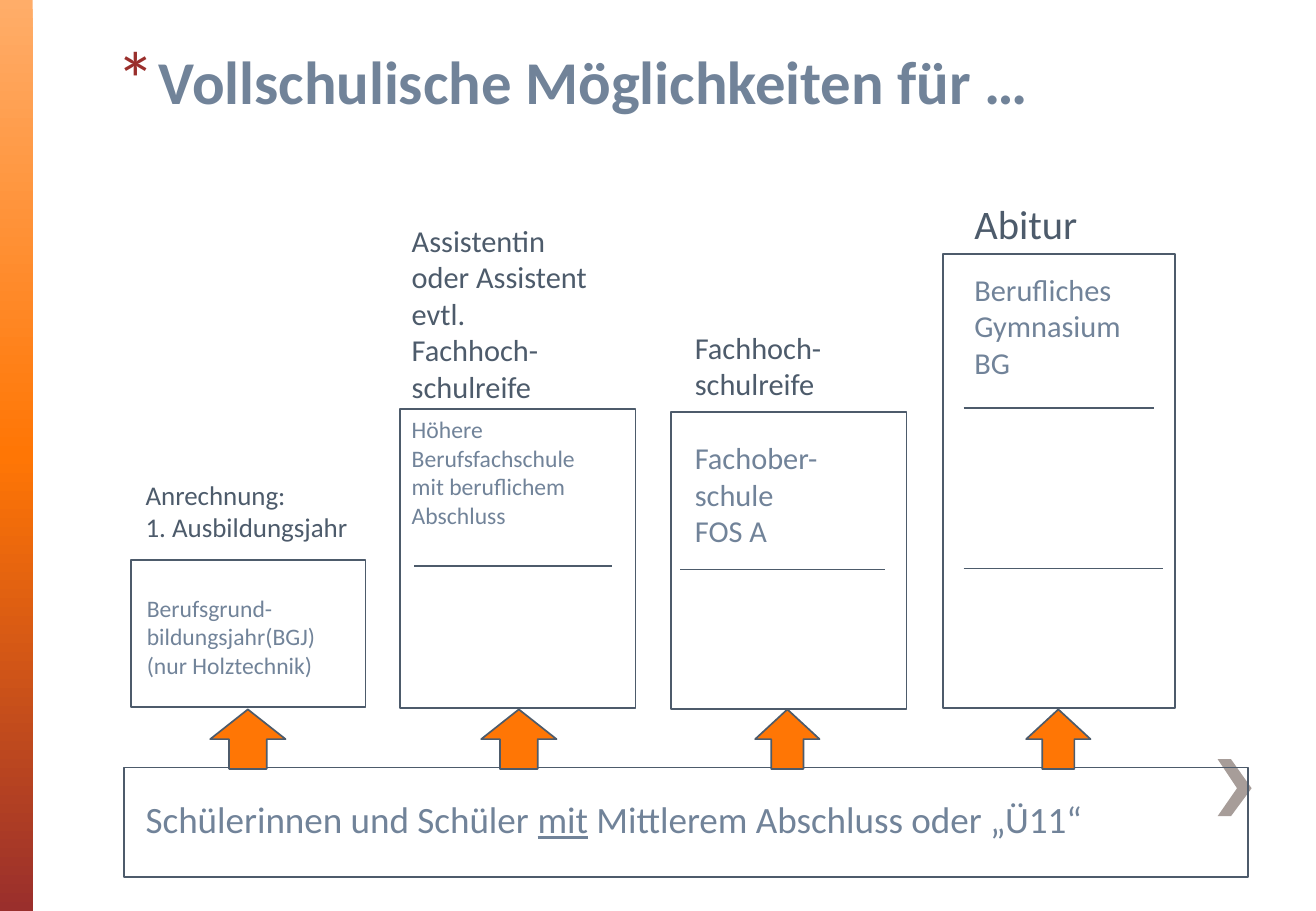
from lxml import etree
from pptx import Presentation
from pptx.dml.color import RGBColor
from pptx.enum.shapes import MSO_CONNECTOR, MSO_SHAPE
from pptx.oxml import parse_xml
from pptx.oxml.ns import nsdecls, qn
from pptx.util import Inches, Pt

FONT = "Calibri"
DARK = RGBColor(0x4D, 0x5B, 0x6B)
SLATE = RGBColor(0x71, 0x83, 0x99)
ORANGE = RGBColor(0xFF, 0x76, 0x05)
LIGHT_ORANGE = RGBColor(0xFF, 0xAD, 0x69)
RED = RGBColor(0x9A, 0x2F, 0x2C)
GREY = RGBColor(0xA7, 0x9D, 0x99)

# left, top, width, height
SCHOOL_BOXES = [
    (1.08, 4.61, 1.93, 1.21),
    (3.29, 3.37, 1.94, 2.46),
    (5.52, 3.39, 1.94, 2.45),
    (7.76, 2.09, 1.91, 3.74),
]
# left, top, width, height, size, colour, paragraphs
LABELS = [
    (1.1, 3.89, 2.36, 0.64, 16, DARK, ["Anrechnung:", "1. Ausbildungsjahr"]),
    (1.11, 4.84, 2.05, 0.81, 14, SLATE,
     ["Berufsgrund-bildungsjahr(BGJ)\v(nur Holztechnik)"]),
    (3.29, 1.78, 1.96, 1.61, 18, DARK,
     ["Assistentin", "oder Assistent", "evtl.", "Fachhoch-schulreife"]),
    (3.29, 3.37, 1.94, 1.75, 14, SLATE,
     ["Höhere", "Berufsfachschule", "mit beruflichem Abschluss"]),
    (5.62, 2.66, 1.7, 0.7, 18, DARK, ["Fachhoch-schulreife"]),
    (5.62, 3.57, 1.64, 1.01, 18, SLATE, ["Fachober-schule", "FOS A"]),
    (7.92, 1.59, 1.61, 0.5, 24, DARK, ["Abitur"]),
    (7.92, 2.18, 1.61, 1.01, 18, SLATE, ["Berufliches", "Gymnasium", "BG"]),
]
# left, right, y
DIVIDERS = [(3.41, 5.04, 4.66), (5.6, 7.28, 4.69),
            (7.93, 9.5, 3.36), (7.93, 9.57, 4.68)]
# centre, width
ARROWS = [(2.04, 0.62), (4.27, 0.62), (6.48, 0.53), (8.71, 0.53)]


def add_preset(slide, preset, left, top, width, height):
    shape = slide.shapes.add_shape(
        preset, Inches(left), Inches(top), Inches(width), Inches(height))
    shape.shadow.inherit = False
    return shape


def set_outline(shape):
    shape.line.color.rgb = DARK
    shape.line.width = Pt(1)


def add_side_bar(slide):
    bar = add_preset(slide, MSO_SHAPE.RECTANGLE, 0, 0, 0.27, 7.5)
    bar.line.fill.background()
    stops = "".join(
        f'<a:gs pos="{position}"><a:srgbClr val="{colour}"/></a:gs>'
        for position, colour in
        [(0, LIGHT_ORANGE), (50000, ORANGE), (100000, RED)])
    gradient = parse_xml(
        f'<a:gradFill {nsdecls("a")} rotWithShape="1"><a:gsLst>{stops}</a:gsLst>'
        '<a:lin ang="5400000" scaled="0"/></a:gradFill>')
    bar._element.spPr.find(qn("a:prstGeom")).addnext(gradient)


def add_chevron(slide):
    points = [(10.02, 6.25), (10.18, 6.49), (10.02, 6.72),
              (10.13, 6.72), (10.3, 6.49)]
    builder = slide.shapes.build_freeform(Inches(10.13), Inches(6.25))
    builder.add_line_segments([(Inches(x), Inches(y)) for x, y in points])
    chevron = builder.convert_to_shape()
    chevron.shadow.inherit = False
    chevron.fill.solid()
    chevron.fill.fore_color.rgb = GREY
    chevron.line.fill.background()


def add_box(slide, left, top, width, height):
    box = add_preset(slide, MSO_SHAPE.RECTANGLE, left, top, width, height)
    box.fill.background()
    set_outline(box)


def add_arrow(slide, centre, width):
    arrow = add_preset(slide, MSO_SHAPE.UP_ARROW,
                       centre - width / 2, 5.84, width, 0.49)
    arrow.fill.solid()
    arrow.fill.fore_color.rgb = ORANGE
    set_outline(arrow)


def add_divider(slide, left, right, y):
    line = slide.shapes.add_connector(
        MSO_CONNECTOR.STRAIGHT, Inches(left), Inches(y), Inches(right), Inches(y))
    set_outline(line)
    etree.SubElement(line._element.spPr, qn("a:effectLst"))


def format_run(run, size, colour):
    run.font.name = FONT
    run.font.size = Pt(size)
    run.font.color.rgb = colour


def add_label(slide, left, top, width, height, size, colour, lines):
    label = slide.shapes.add_textbox(
        Inches(left), Inches(top), Inches(width), Inches(height))
    text_frame = label.text_frame
    text_frame.word_wrap = True
    text_frame.text = "\n".join(lines)
    for paragraph in text_frame.paragraphs:
        for run in paragraph.runs:
            format_run(run, size, colour)
    return text_frame.paragraphs[0]


def add_title(slide):
    paragraph = add_label(slide, 0.86, 0.38, 9.34, 0.83, 36, SLATE,
                          ["Vollschulische Möglichkeiten für …"])
    paragraph.runs[0].font.bold = True
    paragraph.line_spacing = 0.9
    properties = paragraph._p.get_or_add_pPr()
    properties.set("marL", str(Inches(0.35)))
    properties.set("indent", str(-Inches(0.35)))
    for bullet_xml in (
            f'<a:buClr {nsdecls("a")}><a:srgbClr val="{RED}"/></a:buClr>',
            f'<a:buSzPct {nsdecls("a")} val="128000"/>',
            f'<a:buFont {nsdecls("a")} typeface="{FONT}"/>',
            f'<a:buChar {nsdecls("a")} char="*"/>'):
        properties.append(parse_xml(bullet_xml))


def add_entry_label(slide):
    paragraph = add_label(slide, 1.1, 6.51, 9.25, 0.47, 22, SLATE,
                          ["Schülerinnen und Schüler "])
    for text in ("mit", " Mittlerem Abschluss oder „Ü11“"):
        run = paragraph.add_run()
        run.text = text
        format_run(run, 22, SLATE)
        run.font.underline = text == "mit"


def main():
    presentation = Presentation()
    presentation.slide_width = Inches(10.83)
    presentation.slide_height = Inches(7.5)
    slide = presentation.slides.add_slide(presentation.slide_layouts[6])

    add_side_bar(slide)
    add_chevron(slide)
    add_box(slide, 1.02, 6.32, 9.25, 0.9)
    add_entry_label(slide)
    for box in SCHOOL_BOXES:
        add_box(slide, *box)
    for label in LABELS:
        add_label(slide, *label)
    for divider in DIVIDERS:
        add_divider(slide, *divider)
    for arrow in ARROWS:
        add_arrow(slide, *arrow)
    add_title(slide)

    presentation.save("out.pptx")


if __name__ == "__main__":
    main()
